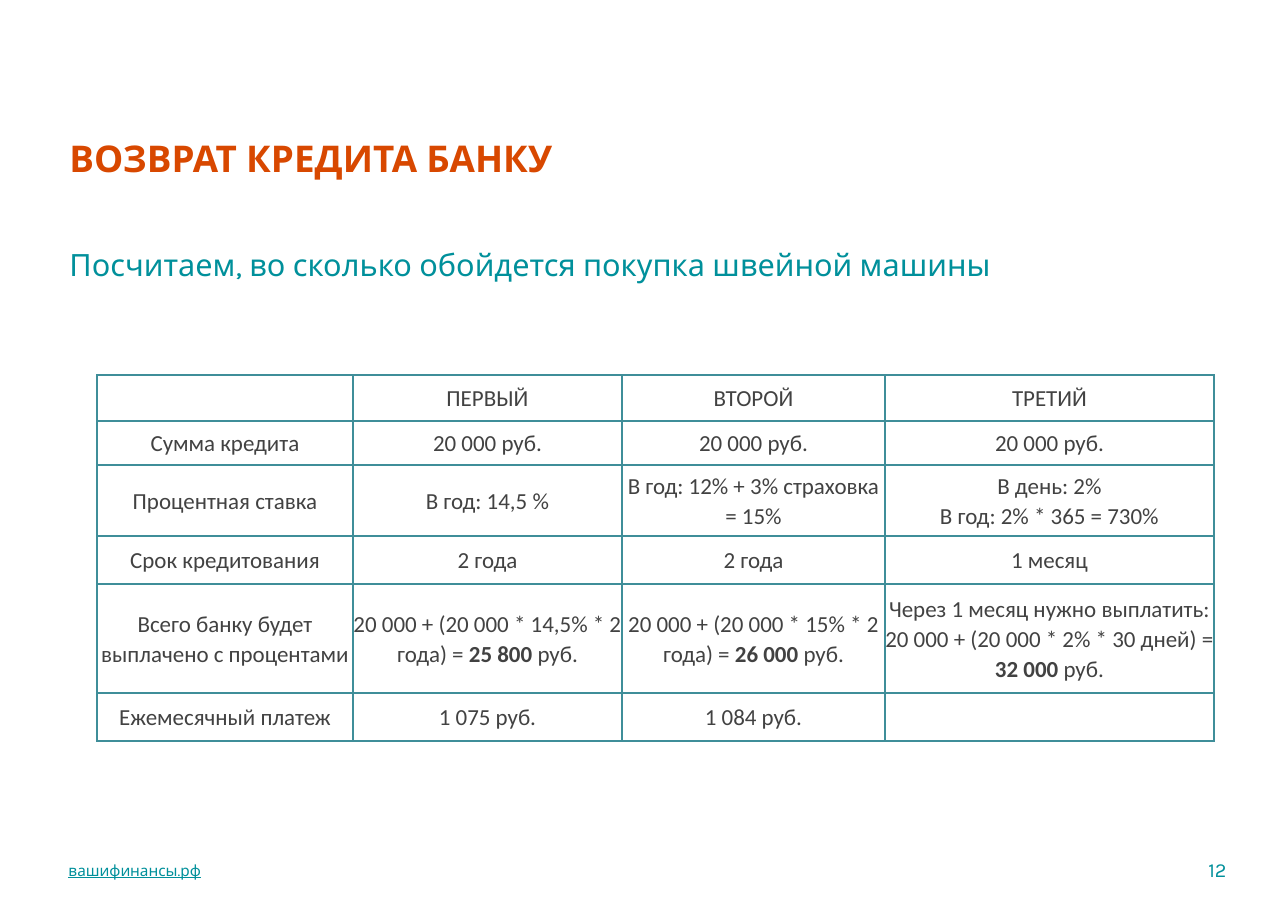
from lxml.etree import SubElement
from pptx import Presentation
from pptx.dml.color import RGBColor
from pptx.enum.text import MSO_ANCHOR, PP_ALIGN
from pptx.oxml.ns import qn
from pptx.util import Emu, Pt

TEAL = "00909B"
ORANGE = "D84800"
GRAY = "424242"
BORDER = "3F8E99"

COLUMN_WIDTHS = [256, 269, 263, 329]
ROW_HEIGHTS = [46, 44, 71, 48, 109, 48]
LOAN = "20 000 руб."
ROWS = [
    ["", "ПЕРВЫЙ", "ВТОРОЙ", "ТРЕТИЙ"],
    ["Сумма кредита", LOAN, LOAN, LOAN],
    ["Процентная ставка", "В год: 14,5 %", "В год: 12% + 3% страховка = 15%",
     "В день: 2%\nВ год: 2% * 365 = 730%"],
    ["Срок кредитования", "2 года", "2 года", "1 месяц"],
    ["Всего банку будет выплачено с процентами",
     "20 000 + (20 000 * 14,5% * 2 года) = |25 800| руб.",
     "20 000 + (20 000 * 15% * 2 года) = |26 000| руб.",
     "Через 1 месяц нужно выплатить: 20 000 + (20 000 * 2% * 30 дней) = |32 000| руб."],
    ["Ежемесячный платеж", "1 075 руб.", "1 084 руб.", ""],
]


def px(length):
    return Emu(length * 8290)


def color(value):
    return RGBColor.from_string(value)


class SlideBuilder:
    text_font = "Karla"
    table_font = "Calibri"

    def __init__(self, slide):
        self.slide = slide

    def style(self, paragraph, name, size, fill, bold=None):
        font = paragraph.font
        font.name = name
        font.size = Pt(size)
        font.bold = bold
        font.color.rgb = color(fill)

    def text(self, words, left, top, width, height, size, fill, bold=False,
             underline=False, align=PP_ALIGN.LEFT, anchor=MSO_ANCHOR.TOP,
             spacing=1.0, wrap=True):
        shape = self.slide.shapes.add_textbox(px(left), px(top), px(width), px(height))
        frame = shape.text_frame
        frame.word_wrap = wrap
        frame.vertical_anchor = anchor
        frame.margin_left = frame.margin_right = Pt(3.6)
        frame.margin_top = frame.margin_bottom = Pt(3.6)
        paragraph = frame.paragraphs[0]
        paragraph.text = words
        paragraph.alignment = align
        paragraph.line_spacing = spacing
        self.style(paragraph, self.text_font, size, fill, bold)
        paragraph.font.underline = underline

    def table(self, rows, left, top, widths, heights):
        shape = self.slide.shapes.add_table(
            len(rows), len(widths), px(left), px(top), px(sum(widths)), px(sum(heights)))
        table = shape.table
        table.first_row = False
        table.horz_banding = False
        for column, width in zip(table.columns, widths):
            column.width = px(width)
        for row, height, texts in zip(table.rows, heights, rows):
            row.height = px(height)
            for cell, words in zip(row.cells, texts):
                self.cell(cell, words)

    def cell(self, cell, words):
        cell.margin_left = cell.margin_right = cell.margin_top = cell.margin_bottom = 0
        cell.vertical_anchor = MSO_ANCHOR.MIDDLE
        self.borders(cell)
        cell.fill.background()
        frame = cell.text_frame
        for index, line in enumerate(words.split("\n")):
            paragraph = frame.add_paragraph() if index else frame.paragraphs[0]
            paragraph.alignment = PP_ALIGN.CENTER
            paragraph.line_spacing = 1.07
            self.style(paragraph, self.table_font, 15, GRAY)
            for position, part in enumerate(line.split("|")):
                run = paragraph.add_run()
                run.text = part
                if position % 2:
                    run.font.bold = True

    def borders(self, cell):
        properties = cell._tc.get_or_add_tcPr()
        for side in ("a:lnL", "a:lnR", "a:lnT", "a:lnB"):
            line = SubElement(properties, qn(side), w=str(Pt(1)))
            fill = SubElement(line, qn("a:solidFill"))
            SubElement(fill, qn("a:srgbClr"), val=BORDER)


def main():
    presentation = Presentation()
    presentation.slide_width = px(1288)
    presentation.slide_height = px(911)
    slide = presentation.slides.add_slide(presentation.slide_layouts[6])
    builder = SlideBuilder(slide)
    builder.text("вашифинансы.рф", 63, 855, 438, 31, 10, TEAL,
                 underline=True, anchor=MSO_ANCHOR.MIDDLE)
    builder.text("ВОЗВРАТ КРЕДИТА БАНКУ", 64, 135, 1160, 106, 24, ORANGE,
                 bold=True, spacing=0.9)
    builder.text("Посчитаем, во сколько обойдется покупка швейной машины",
                 64, 240, 1160, 62, 20, TEAL)
    builder.table(ROWS, 97, 375, COLUMN_WIDTHS, ROW_HEIGHTS)
    builder.text("12", 1197, 852, 35, 36, 13, TEAL, align=PP_ALIGN.RIGHT,
                 anchor=MSO_ANCHOR.MIDDLE, wrap=False)
    presentation.save("out.pptx")


if __name__ == "__main__":
    main()
